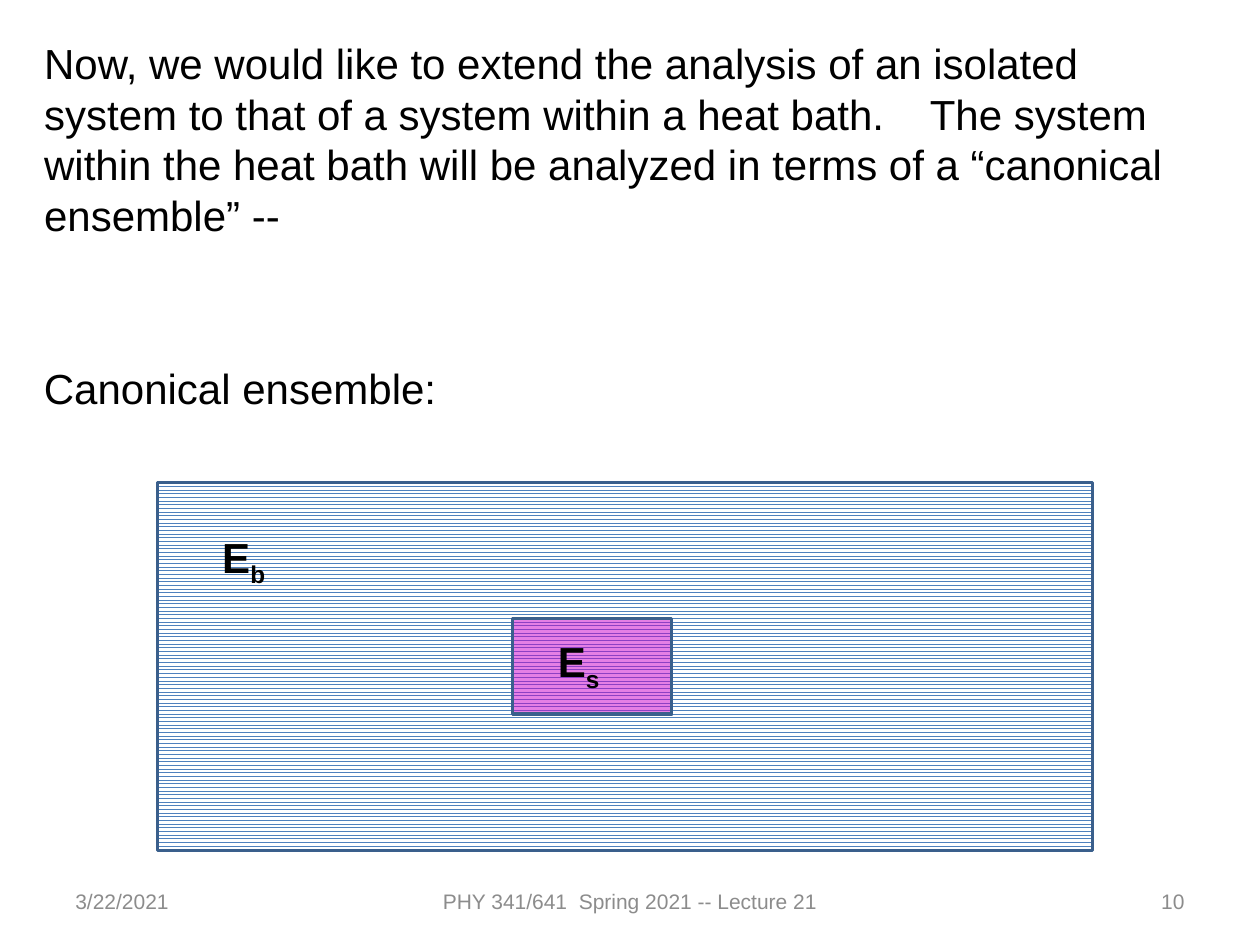
from lxml.etree import SubElement
from pptx import Presentation
from pptx.dml.color import RGBColor
from pptx.enum.dml import MSO_PATTERN
from pptx.enum.shapes import MSO_SHAPE as Shape
from pptx.enum.text import MSO_ANCHOR as Anchor, MSO_AUTO_SIZE as AutoSize, PP_ALIGN as Align
from pptx.oxml.ns import qn
from pptx.util import Inches, Pt

WIDTH, HEIGHT = 10, 7.5
INK, GREY, EDGE = "000000", "8C8C8C", "3A5F8C"
WATER, WHITE, SYSTEM = "4F81BD", "FFFFFF", "CC00CC"


def color(value):
    return RGBColor.from_string(value)


def place(box, left, top, width, height):
    x, y, w, h = box
    return x + left * w, y + top * h, width * w, height * h


def emu(box):
    return [Inches(value) for value in box]


def add_run(paragraph, text, size, ink, bold=False, baseline=0):
    run = paragraph.add_run()
    run.text = text
    run.font.name = "Arial"
    run.font.size = Pt(size)
    run.font.bold = bold
    run.font.color.rgb = color(ink)
    if baseline:
        run._r.get_or_add_rPr().set("baseline", str(baseline * 1000))


def add_text(slide, box, anchor=Anchor.TOP, align=Align.LEFT):
    frame = slide.shapes.add_textbox(*emu(box)).text_frame
    frame.word_wrap = True
    frame.vertical_anchor = anchor
    paragraph = frame.paragraphs[0]
    paragraph.alignment = align
    return paragraph


def add_intro(slide, box):
    title = slide.shapes.title
    title.left, title.top, title.width, title.height = emu(box)
    frame = title.text_frame
    frame.word_wrap = True
    frame.auto_size = AutoSize.NONE
    frame.vertical_anchor = Anchor.TOP
    paragraph = frame.paragraphs[0]
    paragraph.alignment = Align.LEFT
    tabs = SubElement(paragraph._p.get_or_add_pPr(), qn("a:tabLst"))
    SubElement(tabs, qn("a:tab"), pos=str(Inches(7.03)), algn="l")
    for text in (
        "Now, we would like to extend the analysis of an isolated system "
        "to that of a system within a heat bath.",
        "\t",
        "The system within the heat bath will be analyzed in terms of "
        "a “canonical ensemble” --",
    ):
        add_run(paragraph, text, 24, INK)


def add_block(slide, box):
    shape = slide.shapes.add_shape(Shape.RECTANGLE, *emu(box))
    shape.shadow.inherit = False
    shape.line.color.rgb = color(EDGE)
    shape.line.width = Pt(2)
    return shape


def add_energy(slide, box, subscript):
    paragraph = add_text(slide, box)
    add_run(paragraph, "E", 24, INK, bold=True)
    add_run(paragraph, subscript, 24, INK, bold=True, baseline=-25)


def add_heat_bath(slide, box):
    bath = add_block(slide, box)
    bath.fill.patterned()
    bath.fill.pattern = MSO_PATTERN.ZIG_ZAG
    bath.fill.fore_color.rgb = color(WATER)
    bath.fill.back_color.rgb = color(WHITE)

    system = add_block(slide, place(box, 0.38, 0.37, 0.17, 0.26))
    system.fill.solid()
    system.fill.fore_color.rgb = color(SYSTEM)
    tint = system.fill._xPr.find(qn("a:solidFill"))[0]
    SubElement(tint, qn("a:alpha"), val="50000")

    add_energy(slide, place(box, 0.056, 0.115, 0.124, 0.17), "b")
    add_energy(slide, place(box, 0.415, 0.4, 0.124, 0.17), "s")


def add_footer(slide, box):
    for text, left, width, align in (
        ("3/22/2021", 0, 0.26, Align.LEFT),
        ("PHY 341/641  Spring 2021 -- Lecture 21", 0.324, 0.352, Align.CENTER),
        ("10", 0.74, 0.26, Align.RIGHT),
    ):
        paragraph = add_text(slide, place(box, left, 0, width, 1), Anchor.MIDDLE, align)
        add_run(paragraph, text, 12, GREY)


def main():
    presentation = Presentation()
    presentation.slide_width = Inches(WIDTH)
    presentation.slide_height = Inches(HEIGHT)
    slide = presentation.slides.add_slide(presentation.slide_layouts[5])
    add_footer(slide, (0.5, 6.95, 9, 0.4))
    heading = add_text(slide, (0.25, 2.83, 8.58, 0.5))
    add_run(heading, "Canonical ensemble:", 24, INK)
    add_heat_bath(slide, (1.25, 3.83, 7.42, 2.92))
    add_intro(slide, (0.25, 0.25, 9.42, 1.72))
    presentation.save("out.pptx")


if __name__ == "__main__":
    main()
